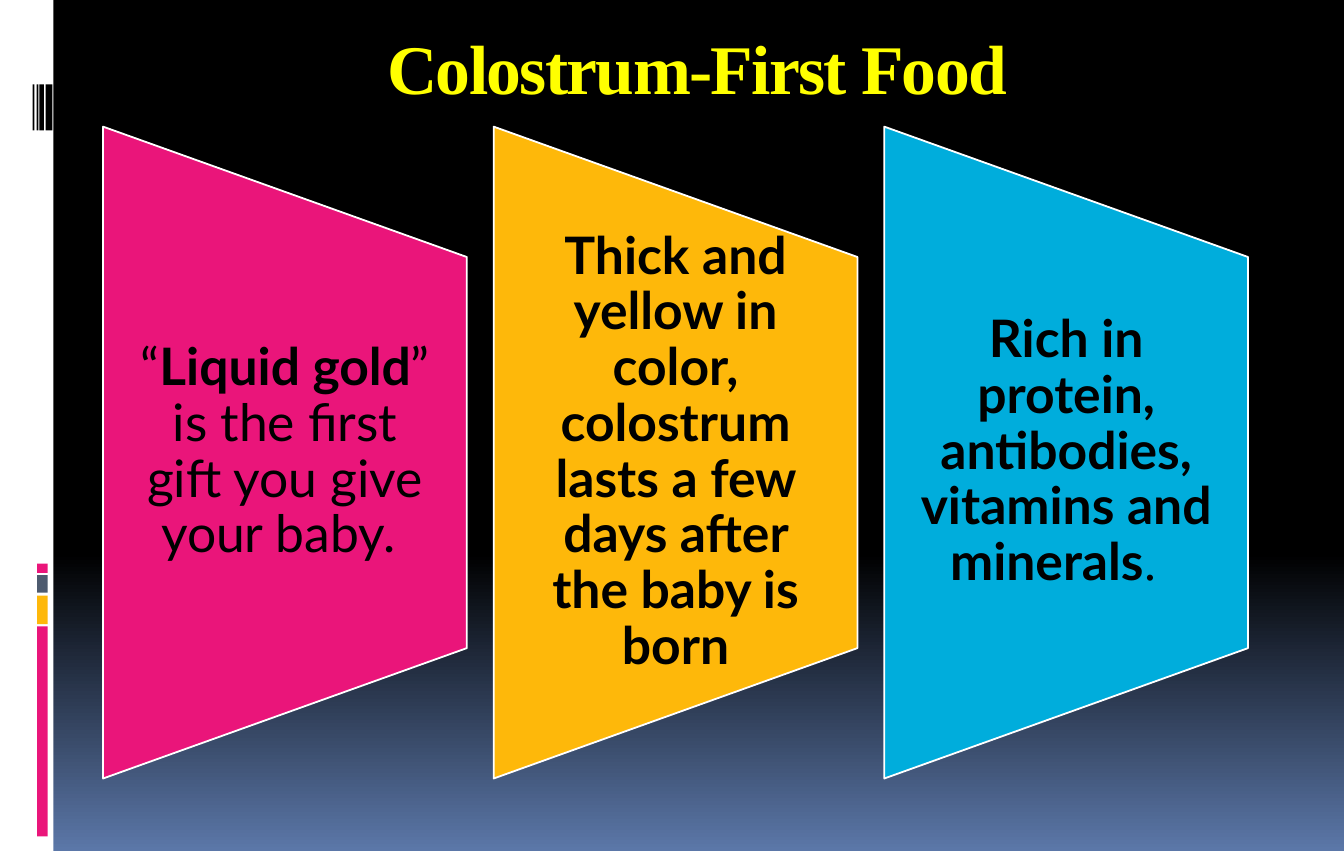
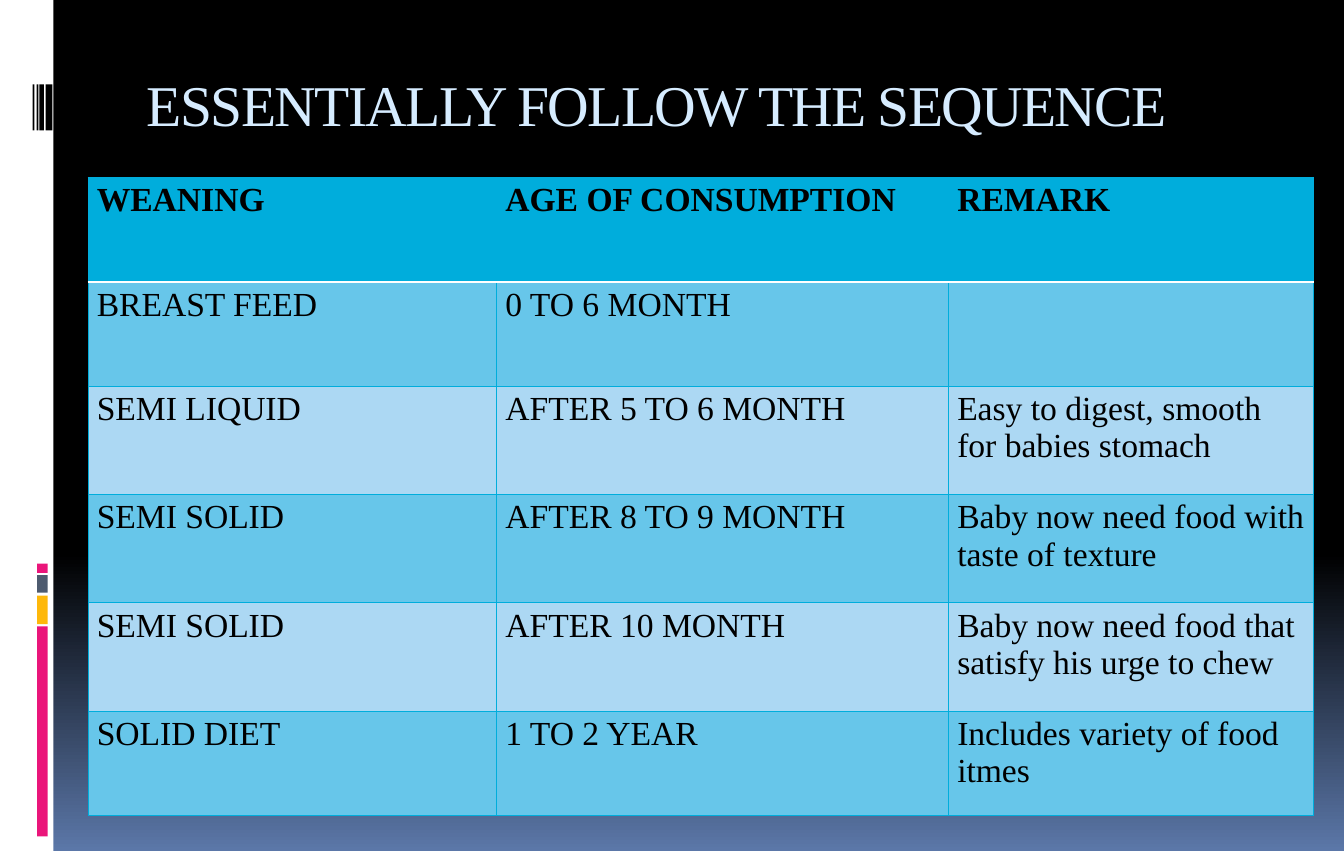
from dataclasses import dataclass

from lxml import etree
from pptx import Presentation
from pptx import util as u
from pptx.dml.color import RGBColor
from pptx.enum import shapes, text
from pptx.oxml.ns import qn

BLACK, WHITE, PINK, AMBER, SLATE, CYAN = "000000", "FFFFFF", "EA157A", "FEB80A", "4E5B6F", "00ADDC"
BAND_DARK, BAND_LIGHT = "67C6EA", "ACD8F3"
SERIF, SANS = "Times New Roman", "Lato"
SLIDE_W, SLIDE_H = 39.5, 25.0


@dataclass(frozen=True)
class Box:
    x: float
    y: float
    w: float
    h: float

    def emu(self) -> list:
        return [u.Cm(v) for v in (self.x, self.y, self.w, self.h)]


@dataclass(frozen=True)
class Run:
    text: str
    size: float
    color: str = BLACK
    font: str = SERIF
    bold: bool = False
    spacing: int = 0


@dataclass(frozen=True)
class Panel:
    fill: str
    runs: tuple


@dataclass(frozen=True)
class Bar:
    box: Box
    fill: str


SIDEBAR = [
    Bar(Box(0, 0, 1.57, SLIDE_H), WHITE),
    *(Bar(Box(1.09, y, 0.31, h), c) for y, h, c in (
        (18.4, 6.17, PINK), (17.5, 0.84, AMBER), (16.9, 0.51, SLATE), (16.56, 0.27, PINK))),
    *(Bar(Box(x, 2.48, w, 1.35), BLACK) for x, w in (
        (1.34, 0.2), (1.16, 0.13), (1.08, 0.05), (0.96, 0.05))),
]

PANELS = [
    Panel(PINK, (Run("“", 43, font=SANS), Run("Liquid gold", 43, font=SANS, bold=True),
                 Run("” is the first gift you give your baby. ", 43, font=SANS))),
    Panel(AMBER, (Run("Thick and yellow in color, colostrum lasts a few days after the baby is born",
                      43, font=SANS, bold=True),)),
    Panel(CYAN, (Run("Rich in protein, antibodies, vitamins and minerals", 43, font=SANS, bold=True),
                 Run(".  ", 43))),
]

WEANING_ROWS = [
    ("WEANING", "AGE OF CONSUMPTION", "REMARK"),
    ("BREAST FEED", "0 TO 6 MONTH", ""),
    ("SEMI LIQUID", "AFTER 5 TO 6 MONTH", "Easy to digest, smooth for babies stomach"),
    ("SEMI SOLID", "AFTER 8 TO 9 MONTH", "Baby now need food with taste of texture"),
    ("SEMI SOLID", "AFTER 10 MONTH", "Baby now need food that satisfy his urge to chew"),
    ("SOLID DIET", "1 TO 2 YEAR", "Includes variety of food itmes"),
]
COL_WIDTHS = (12.01, 13.28, 10.72)
ROW_HEIGHTS = (3.07, 3.07, 3.18, 3.18, 3.18, 3.07)


def rgb(value: str) -> RGBColor:
    return RGBColor.from_string(value)


def set_attrs(target, values: dict) -> None:
    for name, value in values.items():
        setattr(target, name, value)


def add_runs(p, runs) -> None:
    for run in runs:
        r = p.add_run()
        r.text = run.text
        set_attrs(r.font, {"size": u.Pt(run.size), "name": run.font, "bold": run.bold})
        r.font.color.rgb = rgb(run.color)
        if run.spacing:
            r._r.get_or_add_rPr().set("spc", str(run.spacing))


def add_text(s, box: Box, runs, margins: tuple, frame: dict, para: dict) -> None:
    tf = s.shapes.add_textbox(*box.emu()).text_frame
    side, edge = (u.Cm(m) for m in margins)
    set_attrs(tf, {"word_wrap": True, "margin_left": side, "margin_right": side,
                   "margin_top": edge, "margin_bottom": edge, **frame})
    p = tf.paragraphs[0]
    set_attrs(p, para)
    add_runs(p, runs)


def add_filled(s, kind, box: Box, fill: str, line: str = ""):
    sp = s.shapes.add_shape(kind, *box.emu())
    sp.shadow.inherit = False
    sp.fill.solid()
    sp.fill.fore_color.rgb = rgb(fill)
    if line:
        sp.line.color.rgb = rgb(line)
        sp.line.width = u.Pt(1.5)
    else:
        sp.line.fill.background()
    return sp


def add_slide(prs):
    s = prs.slides.add_slide(prs.slide_layouts[6])
    fill = s.background.fill
    fill.gradient()
    fill.gradient_angle = 270
    for stop, (position, color) in zip(fill.gradient_stops, ((0.65, BLACK), (1, "5B77A8"))):
        stop.position = position
        stop.color.rgb = rgb(color)
    for bar in SIDEBAR:
        add_filled(s, shapes.MSO_SHAPE.RECTANGLE, bar.box, bar.fill)
    return s


def add_title(s, box: Box, run: Run, align) -> None:
    add_text(s, box, [run], (0.36, 0.18), {"vertical_anchor": text.MSO_ANCHOR.TOP},
             {"alignment": align})


def add_panel(s, index: int, panel: Panel) -> None:
    width, height, top = 10.69, 19.15, 3.72
    left = 3.03 + index * 11.48
    turned = Box(left + (width - height) / 2, top + (height - width) / 2, height, width)
    sp = add_filled(s, shapes.MSO_SHAPE.FLOWCHART_MANUAL_OPERATION, turned, panel.fill, WHITE)
    sp.rotation = 270
    add_text(s, Box(left, top + height / 5, width, height * 3 / 5), panel.runs, (0.76, 0),
             {"vertical_anchor": text.MSO_ANCHOR.MIDDLE},
             {"alignment": text.PP_ALIGN.CENTER, "line_spacing": 0.9})


def set_borders(cell, row: int) -> None:
    tc_pr = cell._tc.get_or_add_tcPr()
    white_edge = {0: "lnB", 1: "lnT"}.get(row)
    for i, edge in enumerate(("lnL", "lnR", "lnT", "lnB")):
        color, width = (WHITE, 1.5) if edge == white_edge else (CYAN, 0.94)
        ln = etree.Element(qn(f"a:{edge}"), w=str(int(u.Pt(width))))
        fill = etree.SubElement(ln, qn("a:solidFill"))
        etree.SubElement(fill, qn("a:srgbClr"), val=color)
        tc_pr.insert(i, ln)


def add_weaning_table(s) -> None:
    box = Box(2.59, 5.21, sum(COL_WIDTHS), sum(ROW_HEIGHTS))
    table = s.shapes.add_table(len(ROW_HEIGHTS), len(COL_WIDTHS), *box.emu()).table
    for col, width in zip(table.columns, COL_WIDTHS):
        col.width = u.Cm(width)
    for i, (row, height) in enumerate(zip(table.rows, ROW_HEIGHTS)):
        row.height = u.Cm(height)
        color = CYAN if i == 0 else BAND_DARK if i % 2 else BAND_LIGHT
        for cell, words in zip(row.cells, WEANING_ROWS[i]):
            cell.fill.solid()
            cell.fill.fore_color.rgb = rgb(color)
            set_borders(cell, i)
            if words:
                add_runs(cell.text_frame.paragraphs[0], [Run(words, 28, bold=i == 0)])


def main() -> None:
    """Build the two infant feeding slides and save them."""
    prs = Presentation()
    set_attrs(prs, {"slide_width": u.Cm(SLIDE_W), "slide_height": u.Cm(SLIDE_H)})

    s = add_slide(prs)
    add_title(s, Box(3.7, 0.56, 33.58, 3.05),
              Run("Colostrum-First Food", 58, "FFFF00", bold=True, spacing=-140),
              text.PP_ALIGN.CENTER)
    for i, panel in enumerate(PANELS):
        add_panel(s, i, panel)

    s = add_slide(prs)
    add_title(s, Box(3.96, 1.85, 34.24, 3.33),
              Run("ESSENTIALLY FOLLOW THE SEQUENCE", 48, "D6ECFF", spacing=-140),
              text.PP_ALIGN.LEFT)
    add_weaning_table(s)

    prs.save("out.pptx")


if __name__ == "__main__":
    main()
